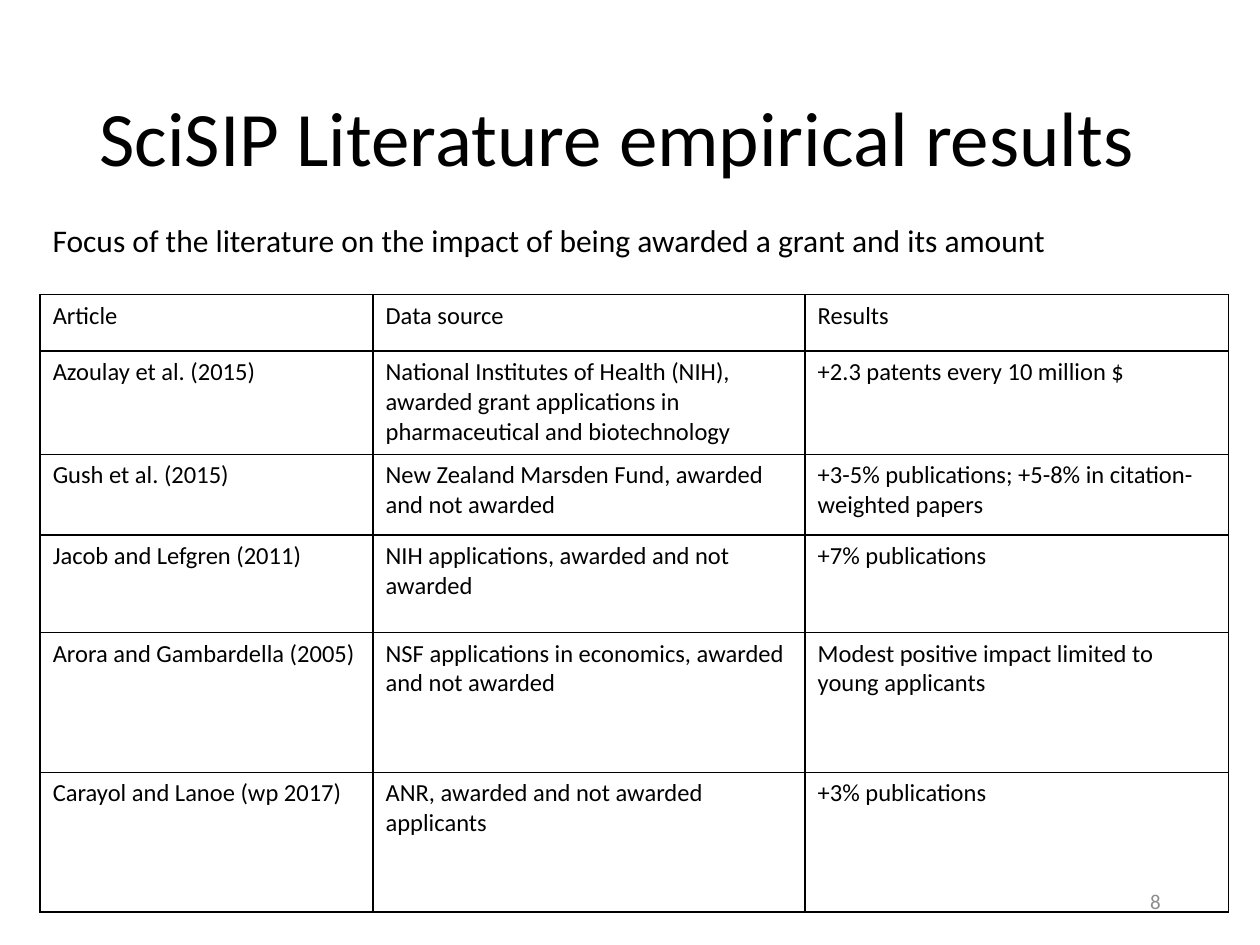
from dataclasses import dataclass

from lxml import etree
from pptx import Presentation
from pptx.dml.color import RGBColor
from pptx.enum.text import MSO_ANCHOR, PP_ALIGN
from pptx.oxml.ns import qn
from pptx.util import Cm, Pt

LEFT, RIGHT = PP_ALIGN.LEFT, PP_ALIGN.RIGHT
TOP, MIDDLE = MSO_ANCHOR.TOP, MSO_ANCHOR.MIDDLE
TITLE_ONLY = 5

# Content
TITLE = "SciSIP Literature empirical results"
FOCUS = "Focus of the literature on the impact of being awarded a grant and its amount"
PAGE_NUMBER = "8"
STUDIES = [
    ("Article", "Data source", "Results"),
    ("Azoulay et al. (2015)",
     "National Institutes of Health (NIH), awarded grant applications in "
     "pharmaceutical and biotechnology",
     "+2.3 patents every 10 million $"),
    ("Gush et al. (2015)",
     "New Zealand Marsden Fund, awarded and not awarded",
     "+3-5% publications; +5-8% in citation-weighted papers"),
    ("Jacob and Lefgren (2011)",
     "NIH applications, awarded and not awarded",
     "+7% publications"),
    ("Arora and Gambardella (2005)",
     "NSF applications in economics, awarded and not awarded",
     "Modest positive impact limited to young applicants"),
    ("Carayol and Lanoe (wp 2017)",
     "ANR, awarded and not awarded applicants",
     "+3% publications"),
]

# Layout in centimetres
MARGIN = 0.81
TABLE_TOP = 5.94
COLUMN_WIDTHS = (6.71, 8.71, 8.53)
ROW_HEIGHTS = (1.14, 2.08, 1.63, 1.96, 2.82, 2.82)


@dataclass(frozen=True)
class Theme:
    font: str = "Calibri"
    ink: str = "000000"
    muted: str = "8C8C8C"
    title: int = 44
    focus: int = 18
    table: int = 14
    number: int = 12
    border: int = 1


THEME = Theme()


def write(frame, text, size, color=THEME.ink, align=LEFT):
    frame.text = text
    frame.word_wrap = True
    paragraph = frame.paragraphs[0]
    paragraph.alignment = align
    font = paragraph.runs[0].font
    font.name, font.size = THEME.font, Pt(size)
    font.color.rgb = RGBColor.from_string(color)
    return paragraph


def add_label(slide, box, text, size, anchor=TOP, **style):
    frame = slide.shapes.add_textbox(*map(Cm, box)).text_frame
    write(frame, text, size, **style)
    frame.vertical_anchor = anchor


def outline(cell):
    properties = cell._tc.get_or_add_tcPr()
    for side in ("a:lnL", "a:lnR", "a:lnT", "a:lnB"):
        line = etree.SubElement(properties, qn(side), w=str(Pt(THEME.border)))
        fill = etree.SubElement(line, qn("a:solidFill"))
        etree.SubElement(fill, qn("a:srgbClr"), val=THEME.ink)


def add_studies(slide):
    table = slide.shapes.add_table(
        len(STUDIES), len(COLUMN_WIDTHS), Cm(MARGIN), Cm(TABLE_TOP),
        Cm(sum(COLUMN_WIDTHS)), Cm(sum(ROW_HEIGHTS))).table
    table.first_row = table.horz_banding = False
    for column, width in zip(table.columns, COLUMN_WIDTHS):
        column.width = Cm(width)
    for row, height, study in zip(table.rows, ROW_HEIGHTS, STUDIES):
        row.height = Cm(height)
        for cell, text in zip(row.cells, study):
            write(cell.text_frame, text, THEME.table)
            outline(cell)
            cell.fill.background()


def main():
    deck = Presentation()
    deck.slide_width, deck.slide_height = Cm(25.4), Cm(19.05)
    slide = deck.slides.add_slide(deck.slide_layouts[TITLE_ONLY])

    # Title
    title = slide.shapes.title
    title.left, title.top, title.width, title.height = map(Cm, (1.75, 1.02, 21.89, 3.68))
    write(title.text_frame, TITLE, THEME.title).line_spacing = 0.9
    title.text_frame.vertical_anchor = MIDDLE

    # Table, lead sentence and page number
    add_studies(slide)
    add_label(slide, (MARGIN, 4.34, 20.83, 1.02), FOCUS, THEME.focus)
    add_label(slide, (17.93, 17.65, 5.72, 1.02), PAGE_NUMBER, THEME.number,
              anchor=MIDDLE, color=THEME.muted, align=RIGHT)

    deck.save("out.pptx")


if __name__ == "__main__":
    main()
